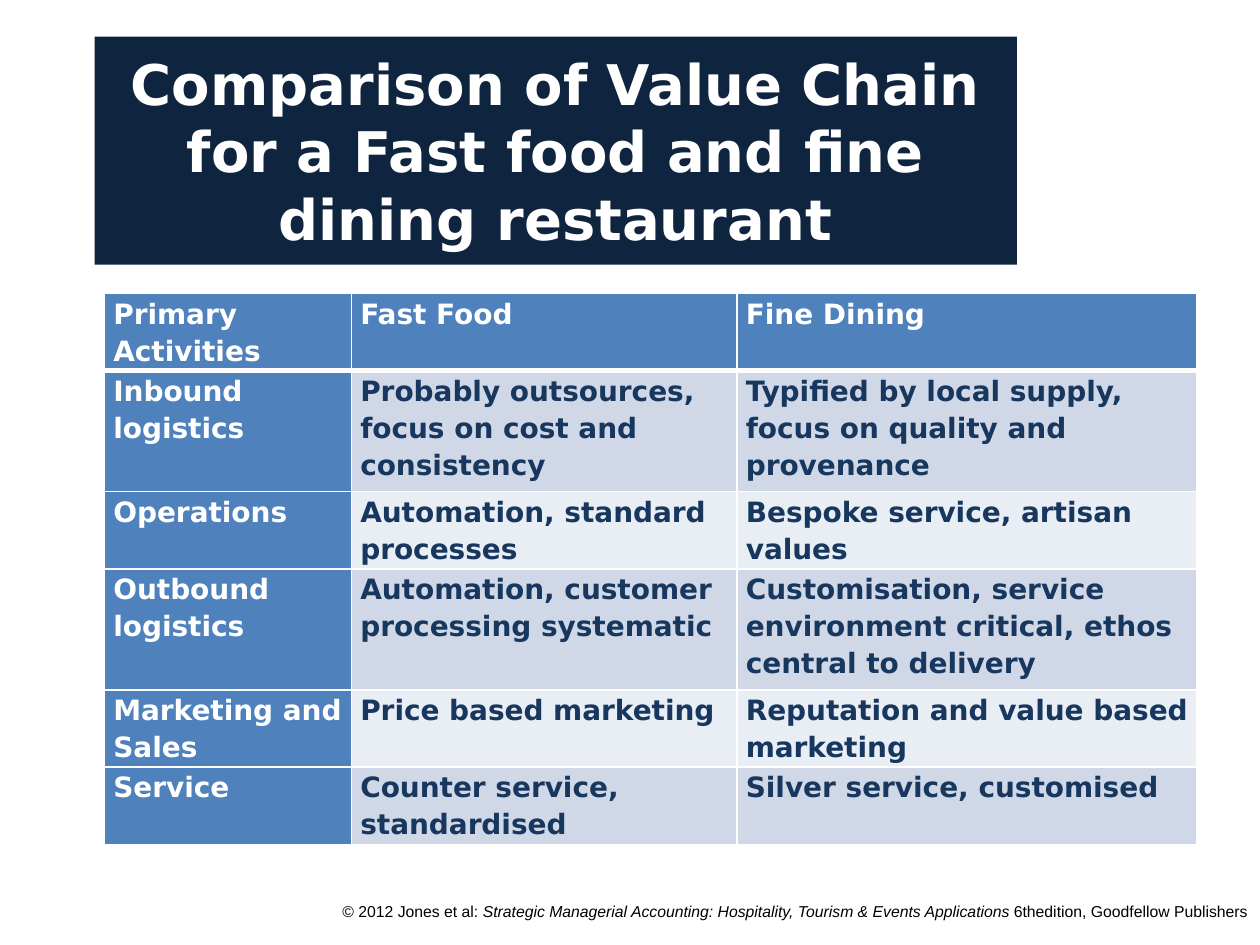
from dataclasses import dataclass

from lxml import etree
from pptx import Presentation
from pptx.dml.color import RGBColor
from pptx.enum.text import MSO_ANCHOR, MSO_AUTO_SIZE, PP_ALIGN
from pptx.oxml.ns import qn
from pptx.util import Inches, Pt

LEFT, CENTER, RIGHT = PP_ALIGN.LEFT, PP_ALIGN.CENTER, PP_ALIGN.RIGHT
TOP, MIDDLE = MSO_ANCHOR.TOP, MSO_ANCHOR.MIDDLE
FIXED = MSO_AUTO_SIZE.NONE


@dataclass(frozen=True)
class Theme:
    """Colours, fonts and type sizes of the slide."""
    navy: str = "0F243E"
    blue: str = "4F81BD"
    ink: str = "17375E"
    bands: tuple = ("D0D8E8", "E9EDF4")
    white: str = "FFFFFF"
    black: str = "000000"
    main: str = "DejaVu Sans"
    plain: str = "Arial"
    head: int = 32
    body: int = 16
    small: int = 9


THEME = Theme()
TITLE = "Comparison of Value Chain for a Fast food and fine dining restaurant"
CREDIT = (
    ("© 2012 Jones et al: ", False),
    ("Strategic Managerial Accounting: Hospitality, Tourism & Events Applications ", True),
    ("6thedition, Goodfellow Publishers", False),
)
ROWS = (
    ("Primary Activities", "Fast Food", "Fine Dining"),
    ("Inbound logistics", "Probably outsources, focus on cost and consistency",
     "Typified by local supply, focus on quality and provenance"),
    ("Operations", "Automation, standard processes", "Bespoke service, artisan values"),
    ("Outbound logistics", "Automation, customer processing systematic",
     "Customisation, service environment critical, ethos central to delivery"),
    ("Marketing and Sales", "Price based marketing", "Reputation and value based marketing"),
    ("Service", "Counter service, standardised", "Silver service, customised"),
)
WIDTHS = (1.96, 3.06, 3.65)
SHORT, TALL = 0.47, 0.96
HEIGHTS = (SHORT, TALL, SHORT, TALL, SHORT, SHORT)


def write(frame, runs, size, color, font=THEME.main, bold=False, align=LEFT, space=1.0):
    """Fill a text frame with one paragraph of (text, italic) runs."""
    frame.word_wrap = True
    para = frame.paragraphs[0]
    para.alignment = align
    para.line_spacing = space
    for text, slant in runs:
        run = para.add_run()
        run.text = text
        run.font.name = font
        run.font.size = Pt(size)
        run.font.bold = bold
        run.font.italic = slant
        run.font.color.rgb = RGBColor.from_string(color)


def paint(fill, color):
    """Set a solid fill."""
    fill.solid()
    fill.fore_color.rgb = RGBColor.from_string(color)


def edge(cell, side, width):
    """Draw one white border of a cell."""
    line = etree.SubElement(cell._tc.get_or_add_tcPr(), qn(f"a:ln{side}"), w=str(Pt(width)))
    solid = etree.SubElement(line, qn("a:solidFill"))
    etree.SubElement(solid, qn("a:srgbClr"), val=THEME.white)


def add_title(slide, box):
    """Place the title banner in the box."""
    title = slide.shapes.title
    title.left, title.top, title.width, title.height = map(Inches, box)
    paint(title.fill, THEME.navy)
    frame = title.text_frame
    frame.auto_size = FIXED
    frame.vertical_anchor = MIDDLE
    write(frame, [(TITLE, False)], THEME.head, THEME.white, bold=True, align=CENTER)


def fill_cell(cell, text, row, col):
    """Format one cell by its place in the grid."""
    label = row == 0 or col == 0
    cell.margin_left = cell.margin_right = Inches(0.07)
    cell.margin_top = cell.margin_bottom = 0
    cell.vertical_anchor = TOP
    widths = {"L": 1, "R": 1, "T": 3 if row == 1 else 1, "B": 3 if row == 0 else 1}
    for side, width in widths.items():
        edge(cell, side, width)
    paint(cell.fill, THEME.blue if label else THEME.bands[(row - 1) % 2])
    write(cell.text_frame, [(text, False)], THEME.body,
          THEME.white if label else THEME.ink, bold=True, space=1.15)


def add_grid(slide, box):
    """Place the comparison table in the box."""
    table = slide.shapes.add_table(len(ROWS), len(WIDTHS), *map(Inches, box)).table
    for col, width in zip(table.columns, WIDTHS):
        col.width = Inches(width)
    for row, height in zip(table.rows, HEIGHTS):
        row.height = Inches(height)
    for i, texts in enumerate(ROWS):
        for j, text in enumerate(texts):
            fill_cell(table.cell(i, j), text, i, j)


def add_credit(slide, box):
    """Place the copyright line in the box."""
    frame = slide.shapes.add_textbox(*map(Inches, box)).text_frame
    frame.vertical_anchor = TOP
    write(frame, CREDIT, THEME.small, THEME.black, font=THEME.plain, align=RIGHT)


def main():
    """Build and save the slide."""
    deck = Presentation()
    deck.slide_width, deck.slide_height = Inches(10), Inches(7.5)
    slide = deck.slides.add_slide(deck.slide_layouts[5])
    add_credit(slide, (2.23, 7.11, 7.77, 0.39))
    add_title(slide, (0.75, 0.29, 7.32, 1.81))
    add_grid(slide, (0.83, 2.33, sum(WIDTHS), sum(HEIGHTS)))
    deck.save("out.pptx")


if __name__ == "__main__":
    main()
